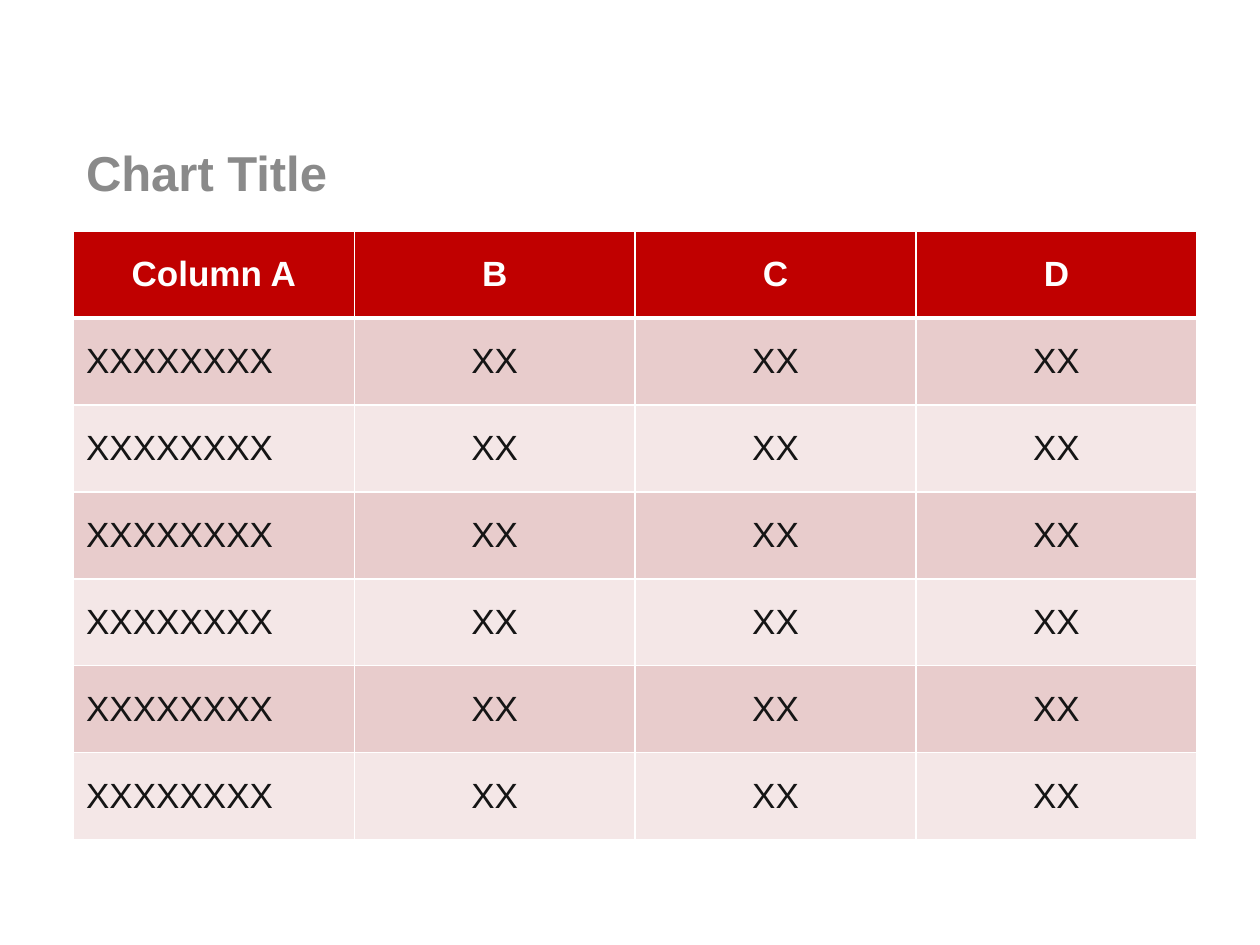
from lxml import etree
from pptx import Presentation
from pptx.dml.color import RGBColor
from pptx.enum.text import MSO_ANCHOR, PP_ALIGN
from pptx.oxml.ns import qn
from pptx.util import Cm, Pt

MIDDLE = MSO_ANCHOR.MIDDLE
LEFT, CENTER = PP_ALIGN.LEFT, PP_ALIGN.CENTER

WHITE = RGBColor(0xFF, 0xFF, 0xFF)
GRAY = RGBColor(0x8A, 0x8A, 0x8A)
INK = RGBColor(0x15, 0x15, 0x15)
RED = RGBColor(0xC0, 0x00, 0x00)
DARK_BAND = RGBColor(0xE8, 0xCC, 0xCC)
LIGHT_BAND = RGBColor(0xF4, 0xE7, 0xE7)

TITLE_FORMAT = {"name": "Arial", "size": Pt(28), "bold": True}
HEADER_FORMAT = {"name": "Arial", "size": Pt(20), "bold": True}
BODY_FORMAT = {"name": "Arial", "size": Pt(20), "bold": False}

HEADER = ["Column A", "B", "C", "D"]
ROWS = [HEADER] + [["XXXXXXXX", "XX", "XX", "XX"]] * 6
CONTENT_LEFT, CONTENT_WIDTH = Cm(1.48), Cm(22.65)
TABLE_TOP, TABLE_HEIGHT = Cm(4.66), Cm(12.27)


def format_text(paragraph, alignment, color, font_format):
    paragraph.alignment = alignment
    paragraph.font.color.rgb = color
    for name, value in font_format.items():
        setattr(paragraph.font, name, value)


def add_border(cell, side, width):
    """Draw a white line on one side (L, R, T or B); call before filling the cell."""
    properties = cell._tc.get_or_add_tcPr()
    line = etree.SubElement(properties, qn(f"a:ln{side}"), w=str(width))
    fill = etree.SubElement(line, qn("a:solidFill"))
    etree.SubElement(fill, qn("a:srgbClr"), val=str(WHITE))


presentation = Presentation()
presentation.slide_width, presentation.slide_height = Cm(25.4), Cm(19.05)
slide = presentation.slides.add_slide(presentation.slide_layouts[5])

title = slide.shapes.title
title.left, title.top = CONTENT_LEFT, Cm(2.74)
title.width, title.height = CONTENT_WIDTH, Cm(1.47)
title.text_frame.text = "Chart Title"
title.text_frame.vertical_anchor = MIDDLE
format_text(title.text_frame.paragraphs[0], LEFT, GRAY, TITLE_FORMAT)

table = slide.shapes.add_table(
    len(ROWS), len(HEADER), CONTENT_LEFT, TABLE_TOP, CONTENT_WIDTH, TABLE_HEIGHT
).table

for row_index, row in enumerate(ROWS):
    is_header = row_index == 0
    if is_header:
        fill_color, text_color, font_format = RED, WHITE, HEADER_FORMAT
    else:
        fill_color = DARK_BAND if row_index % 2 else LIGHT_BAND
        text_color, font_format = INK, BODY_FORMAT
    # The rule between the header and the first body row is heavier
    top_width = Pt(3) if row_index == 1 else Pt(1)
    bottom_width = Pt(3) if is_header else Pt(1)
    border_widths = {"L": Pt(1), "R": Pt(1), "T": top_width, "B": bottom_width}

    for column_index, text in enumerate(row):
        cell = table.cell(row_index, column_index)
        cell.text = text
        cell.vertical_anchor = MIDDLE
        for side, width in border_widths.items():
            add_border(cell, side, width)
        cell.fill.solid()
        cell.fill.fore_color.rgb = fill_color
        alignment = CENTER if is_header or column_index else LEFT
        format_text(cell.text_frame.paragraphs[0], alignment, text_color, font_format)

presentation.save("out.pptx")
